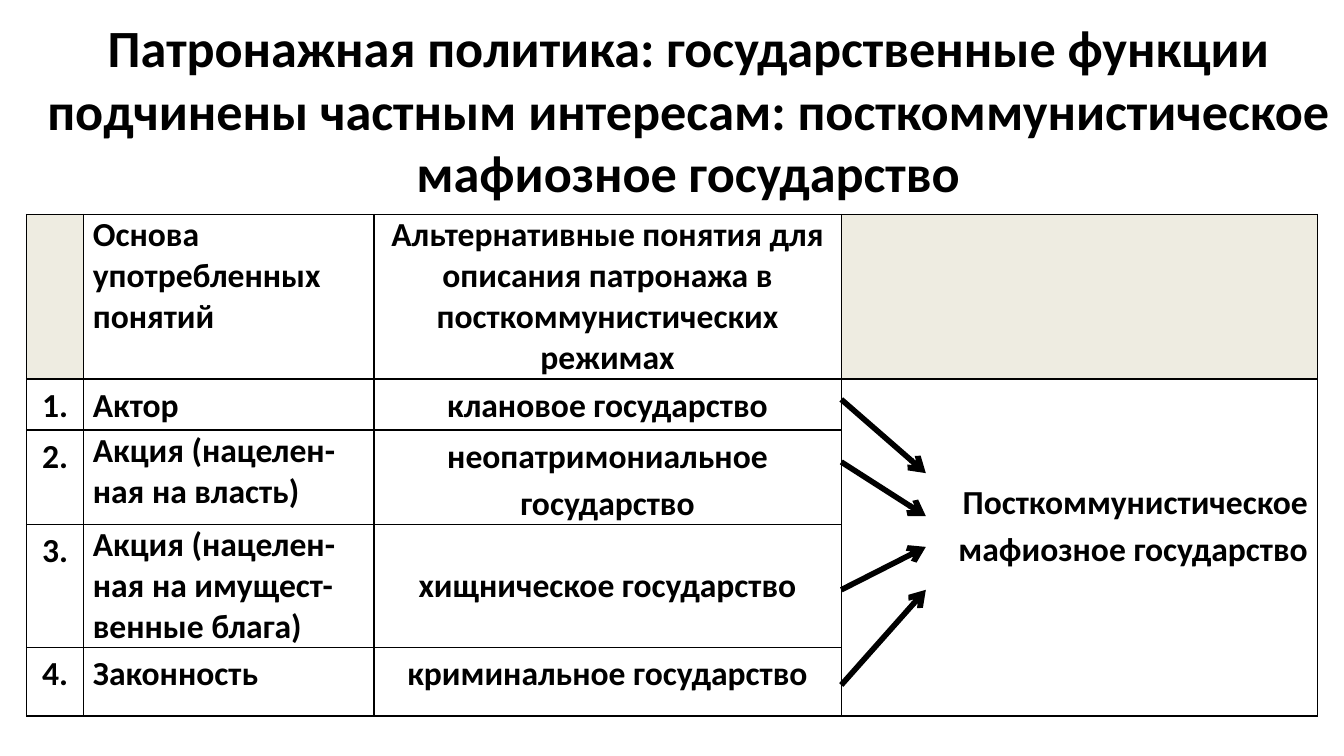
from dataclasses import dataclass

from lxml import etree
from pptx import Presentation
from pptx.dml.color import RGBColor
from pptx.enum.shapes import MSO_CONNECTOR
from pptx.enum.text import MSO_ANCHOR, MSO_AUTO_SIZE, PP_ALIGN
from pptx.oxml import parse_xml
from pptx.oxml.ns import nsdecls, qn
from pptx.util import Pt

STRAIGHT = MSO_CONNECTOR.STRAIGHT
TOP, MIDDLE = MSO_ANCHOR.TOP, MSO_ANCHOR.MIDDLE
LEFT, CENTER = PP_ALIGN.LEFT, PP_ALIGN.CENTER
RIGHT, JUSTIFY = PP_ALIGN.RIGHT, PP_ALIGN.JUSTIFY


@dataclass(frozen=True)
class Theme:
    font: str = "Calibri"
    ink: str = "000000"
    paper: str = "FFFFFF"
    shade: str = "EEECE1"
    title_size: int = 28
    table_size: int = 18
    border: int = 1
    arrow: int = 3


theme = Theme()


def write(frame, text, size, align, spacing=1.0):
    para = frame.paragraphs[0]
    para.alignment = align
    para.line_spacing = spacing
    span = para.add_run()
    span.text = text
    span.font.name = theme.font
    span.font.size = Pt(size)
    span.font.bold = True
    span.font.color.rgb = RGBColor.from_string(theme.ink)


def style_cell(cell, fill):
    properties = cell._tc.get_or_add_tcPr()
    for side in ("lnL", "lnR", "lnT", "lnB"):
        properties.append(parse_xml(
            f'<a:{side} {nsdecls("a")} w="{Pt(theme.border)}"><a:solidFill>'
            f'<a:srgbClr val="{theme.ink}"/></a:solidFill></a:{side}>'))
    cell.fill.solid()
    cell.fill.fore_color.rgb = RGBColor.from_string(fill)
    cell.margin_left = cell.margin_right = Pt(5)
    cell.margin_top = cell.margin_bottom = Pt(0)


deck = Presentation()
deck.slide_width, deck.slide_height = Pt(720), Pt(405)
page = deck.slides.add_slide(deck.slide_layouts[5])

title = page.shapes.title
title.left, title.top, title.width, title.height = Pt(8.6), Pt(4.5), Pt(720), Pt(79)
title.text_frame.word_wrap = True
title.text_frame.auto_size = MSO_AUTO_SIZE.NONE
title.text_frame.vertical_anchor = TOP
write(title.text_frame,
      "Пaтронажная политика: государственные функции подчинены частным "
      "интересам: посткоммунистическое мафиозное государство",
      theme.title_size, CENTER)

column_widths = (30.5, 155.5, 250.5, 255)
row_heights = (88, 27.5, 50.4, 65.9, 36.5)
table = page.shapes.add_table(
    len(row_heights), len(column_widths), Pt(14.3), Pt(115),
    Pt(sum(column_widths)), Pt(sum(row_heights))).table
table.first_row = table.horz_banding = False
for column, width in zip(table.columns, column_widths):
    column.width = Pt(width)
for row, height in zip(table.rows, row_heights):
    row.height = Pt(height)
    for cell in row.cells:
        style_cell(cell, theme.paper)

for column in (0, 3):
    style_cell_fill = table.cell(0, column).fill
    style_cell_fill.fore_color.rgb = RGBColor.from_string(theme.shade)

write(table.cell(0, 1).text_frame, "Основа употребленных понятий",
      theme.table_size, JUSTIFY)
write(table.cell(0, 2).text_frame,
      "Aльтернативные понятия для описания пaтронажа в "
      "посткоммунистических рeжимах", theme.table_size, CENTER)

concepts = (
    ("Aктор", 1.15, "клановое государство", 1.15, TOP),
    ("Aкция (нацелен-ная на власть)", 1.0,
     "неопатримониальное государство", 1.15, TOP),
    ("Aкция (нацелен-ная на имущест-венные блага)", 1.0,
     "хищническое государство", 1.0, MIDDLE),
    ("Законность", 1.15, "криминальное государство", 1.15, TOP),
)
for number, (basis, basis_spacing, state, state_spacing, anchor) in enumerate(concepts, 1):
    write(table.cell(number, 0).text_frame, f"{number}.", theme.table_size, CENTER, 1.15)
    write(table.cell(number, 1).text_frame, basis, theme.table_size, LEFT, basis_spacing)
    state_cell = table.cell(number, 2)
    state_cell.vertical_anchor = anchor
    write(state_cell.text_frame, state, theme.table_size, CENTER, state_spacing)

result = table.cell(1, 3)
result.merge(table.cell(4, 3))
result.vertical_anchor = MIDDLE
result.margin_bottom = Pt(26)
write(result.text_frame, "Посткоммунистическое мафиозное государство",
      theme.table_size, RIGHT, 1.15)

for start, end in ((214, 253.5), (247.5, 276.5), (316, 293), (367, 316)):
    arrow = page.shapes.add_connector(STRAIGHT, Pt(450.7), Pt(start), Pt(496), Pt(end))
    arrow.line.color.rgb = RGBColor.from_string(theme.ink)
    arrow.line.width = Pt(theme.arrow)
    etree.SubElement(arrow.line._get_or_add_ln(), qn("a:tailEnd"), type="arrow")
    etree.SubElement(arrow._element.spPr, qn("a:effectLst"))

deck.save("out.pptx")
